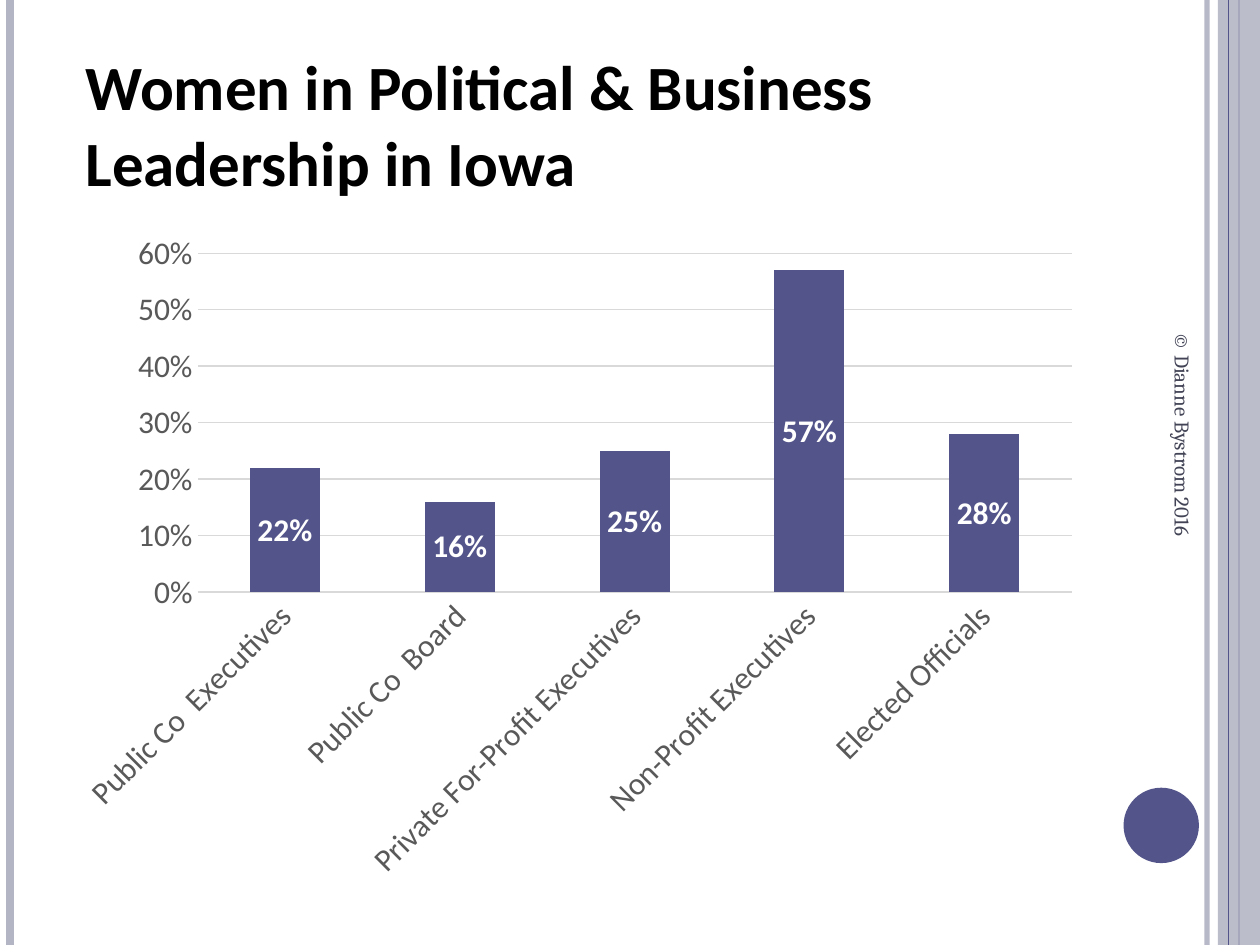
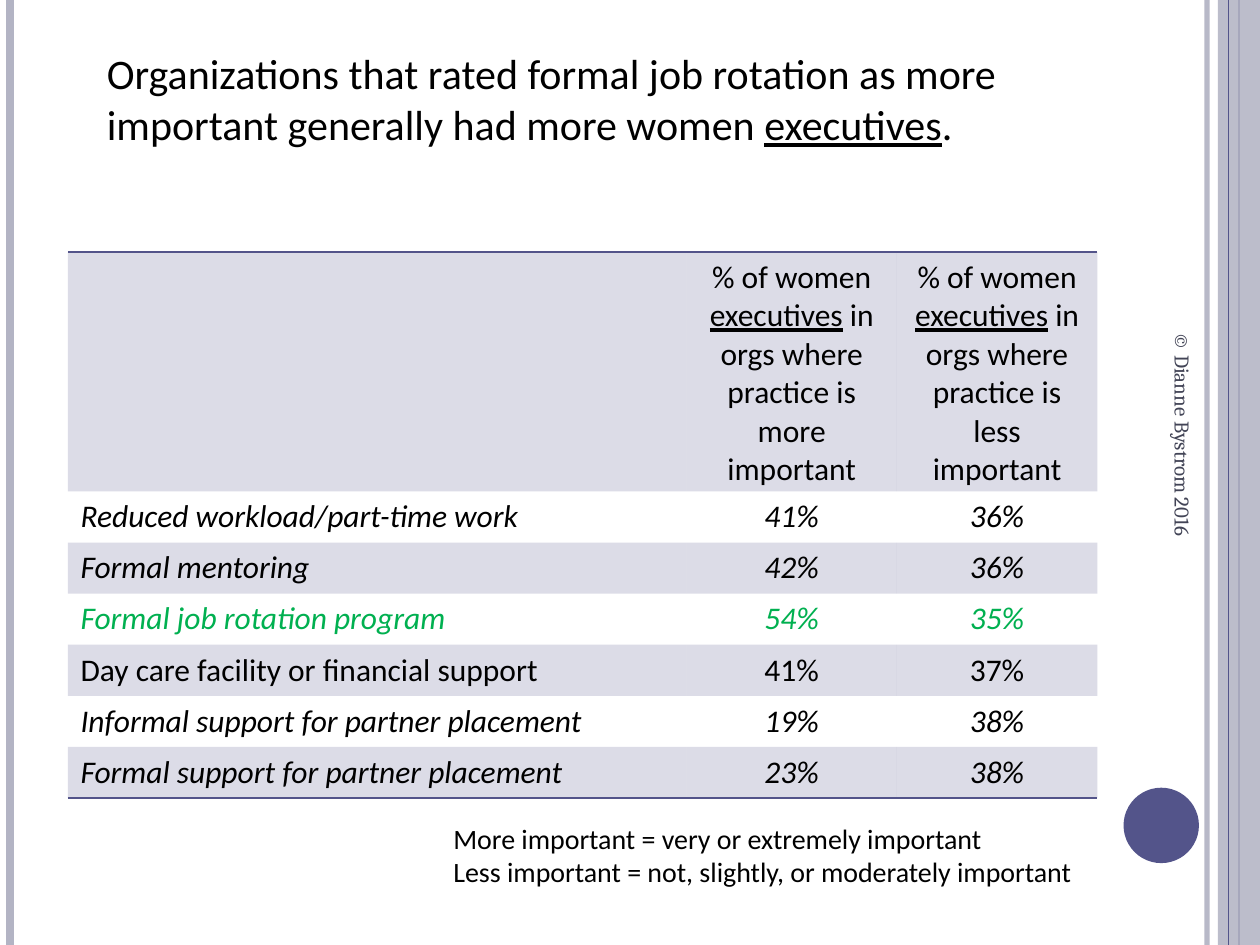
import dataclasses

import lxml.etree
import pptx
import pptx.chart.data
import pptx.dml.color
import pptx.enum.chart
import pptx.enum.shapes
import pptx.enum.text
import pptx.oxml.ns
import pptx.util

Cm = pptx.util.Cm
Pt = pptx.util.Pt
RGB = pptx.dml.color.RGBColor.from_string
qn = pptx.oxml.ns.qn


@dataclasses.dataclass(frozen=True)
class Theme:
    main: str = "53548A"
    pale: str = "B3B4C4"
    ink: str = "000000"
    soft: str = "595959"
    grid: str = "D9D9D9"
    white: str = "FFFFFF"
    green: str = "00B050"
    slate: str = "424456"
    sans: str = "Calibri"
    serif: str = "Cambria"
    head: int = 36
    claim: int = 24
    body: int = 18
    note: int = 16
    foot: int = 12


look = Theme()


def write(frame, *lines, size=look.body, hue=look.ink, face=look.sans,
          bold=False, slant=False, center=False):
    """Write one paragraph per line; words between underscores are underlined."""
    align = pptx.enum.text.PP_ALIGN
    for at, line in enumerate(lines):
        para = frame.paragraphs[0] if at == 0 else frame.add_paragraph()
        para.alignment = align.CENTER if center else align.LEFT
        for turn, words in enumerate(line.split("_")):
            run = para.add_run()
            run.text = words
            font = run.font
            font.name, font.size = face, Pt(size)
            font.bold, font.italic = bold, slant
            font.underline = turn % 2 == 1
            font.color.rgb = RGB(hue)


def fade(node, share):
    """Make the colours inside a node see-through; share is percent opaque."""
    for tint in node.iter(qn("a:srgbClr")):
        lxml.etree.SubElement(tint, qn("a:alpha")).set("val", str(share * 1000))


deck = pptx.Presentation()
deck.slide_width, deck.slide_height = Cm(25.4), Cm(19.05)

# Title texts with their places
heads = [
    ("Women in Political & Business Leadership in Iowa",
     (1.47, 0.84, 20.96, 3.33), look.head, True),
    ("Organizations that rated formal job rotation as more important "
     "generally had more women _executives_.",
     (1.9, 0.84, 20.14, 2.31), look.claim, False),
]

# Side rails (left, points, colour, percent opaque); zero points marks the band
rails = [
    (24.33, 3, look.pale, 93),
    (0.2, 4.5, look.pale, 100),
    (24.98, 1.5, look.main, 100),
    (24.55, 0, look.pale, 87),
    (24.77, 0.75, look.main, 100),
]

# Shared frame, title and footer
for words, place, size, bold in heads:
    slide = deck.slides.add_slide(deck.slide_layouts[5])
    shapes = slide.shapes
    for left, thick, hue, share in rails:
        if thick:
            part = shapes.add_connector(pptx.enum.shapes.MSO_CONNECTOR.STRAIGHT,
                                        Cm(left), 0, Cm(left), deck.slide_height)
            part.line.width = Pt(thick)
            part.line.color.rgb = RGB(hue)
            lxml.etree.SubElement(part.element.spPr, qn("a:effectLst"))
        else:
            part = shapes.add_shape(pptx.enum.shapes.MSO_SHAPE.RECTANGLE,
                                    Cm(left), 0, Cm(0.85), deck.slide_height)
            part.shadow.inherit = False
            part.fill.solid()
            part.fill.fore_color.rgb = RGB(hue)
            part.line.fill.background()
        if share < 100:
            fade(part.element.spPr, share)

    disc = shapes.add_shape(pptx.enum.shapes.MSO_SHAPE.OVAL,
                            Cm(22.65), Cm(15.88), Cm(1.52), Cm(1.52))
    disc.shadow.inherit = False
    disc.fill.solid()
    disc.fill.fore_color.rgb = RGB(look.main)
    disc.line.fill.background()

    title = shapes.title
    title.left, title.top, title.width, title.height = map(Cm, place)
    title.text_frame.vertical_anchor = pptx.enum.text.MSO_ANCHOR.TOP
    title.text_frame.auto_size = pptx.enum.text.MSO_AUTO_SIZE.NONE
    write(title.text_frame, words, size=size, bold=bold)

    foot = shapes.add_textbox(Cm(19.4), Cm(10.39), Cm(8.89), Cm(1.02))
    foot.rotation = 90
    foot.text_frame.word_wrap = True
    foot.text_frame.vertical_anchor = pptx.enum.text.MSO_ANCHOR.MIDDLE
    write(foot.text_frame, "© Dianne Bystrom 2016",
          size=look.foot, hue=look.slate, face=look.serif)

first, second = deck.slides

# Slide 1: column chart
data = pptx.chart.data.CategoryChartData(number_format="0%")
data.categories = ["Public Co  Executives", "Public Co  Board",
                   "Private For-Profit Executives",
                   "Non-Profit Executives", "Elected Officials"]
data.add_series("Series 1", [0.22, 0.16, 0.25, 0.57, 0.28])
chart = first.shapes.add_chart(
    pptx.enum.chart.XL_CHART_TYPE.COLUMN_STACKED,
    Cm(1.27), Cm(4.45), Cm(20.75), Cm(13.55), data).chart
chart.has_title = chart.has_legend = False
chart.font.name, chart.font.size = look.sans, Pt(look.body)
chart.font.color.rgb = RGB(look.soft)

plot = chart.plots[0]
plot.gap_width, plot.overlap = 150, 100
plot.vary_by_categories = False
bars = plot.series[0].format.fill
bars.solid()
bars.fore_color.rgb = RGB(look.main)

plot.has_data_labels = True
marks = plot.data_labels
marks.show_value = True
marks.position = pptx.enum.chart.XL_LABEL_POSITION.CENTER
marks.number_format, marks.number_format_is_linked = "0%", False
marks.font.name, marks.font.size = look.sans, Pt(look.body)
marks.font.bold = True
marks.font.color.rgb = RGB(look.white)

cats, vals = chart.category_axis, chart.value_axis
for axis in (cats, vals):
    axis.major_tick_mark = pptx.enum.chart.XL_TICK_MARK.NONE
    axis.minor_tick_mark = pptx.enum.chart.XL_TICK_MARK.NONE
    font = axis.tick_labels.font
    font.name, font.size = look.sans, Pt(look.body)
    font.color.rgb = RGB(look.soft)
vals.minimum_scale, vals.maximum_scale, vals.major_unit = 0, 0.6, 0.1
vals.tick_labels.number_format = "0%"
vals.tick_labels.number_format_is_linked = False
vals.format.line.fill.background()
for line in (cats.format.line, vals.major_gridlines.format.line):
    line.width = Pt(0.75)
    line.color.rgb = RGB(look.grid)
for body in chart.element.xpath(".//c:catAx/c:txPr/a:bodyPr"):
    body.set("rot", str(-45 * 60000))

# Slide 2: table of practices
ask = "% of women _executives_ in orgs where practice is {} important"
rows = [
    ("", ask.format("more"), ask.format("less")),
    ("Reduced workload/part-time work", "41%", "36%"),
    ("Formal mentoring", "42%", "36%"),
    ("Formal job rotation program", "54%", "35%"),
    ("Day care facility or financial support", "41%", "37%"),
    ("Informal support for partner placement", "19%", "38%"),
    ("Formal support for partner placement", "23%", "38%"),
]
plain, key = (0, 4), 3
last = len(rows) - 1
grid = second.shapes.add_table(len(rows), 3, Cm(1.37), Cm(5.08), Cm(20.75), Cm(11))
table = grid.table
table.first_row = table.horz_banding = False
bare = "{2D5ABB26-0587-4C30-8999-92F81FD0307C}"
grid.element.xpath(".//a:tableStyleId")[0].text = bare
for col, wide in zip(table.columns, (12.47, 4.24, 4.04)):
    col.width = Cm(wide)
for at, row in enumerate(rows):
    table.rows[at].height = Cm(1.03 if at else 4.8)
    for col, words in enumerate(row):
        cell = table.cell(at, col)
        if at % 2 == 0:
            cell.fill.solid()
            cell.fill.fore_color.rgb = RGB(look.main)
        else:
            cell.fill.background()
        if words:
            write(cell.text_frame, words, center=col > 0, slant=at not in plain,
                  hue=look.green if at == key else look.ink)

# Pale fills, then rules above the first row and below the last
for at, line in enumerate(grid.element.xpath(".//a:tr")):
    for props in line.xpath("./a:tc/a:tcPr"):
        fade(props, 20)
        if at in (0, last):
            edge = lxml.etree.Element(qn("a:lnB" if at else "a:lnT"), w=str(Pt(1)))
            fill = lxml.etree.SubElement(edge, qn("a:solidFill"))
            lxml.etree.SubElement(fill, qn("a:srgbClr"), val=look.main)
            props.insert(0, edge)

# Slide 2: key to the terms
note = second.shapes.add_textbox(Cm(8.89), Cm(16.43), Cm(13.13), Cm(1.63))
note.text_frame.word_wrap = False
note.text_frame.auto_size = pptx.enum.text.MSO_AUTO_SIZE.SHAPE_TO_FIT_TEXT
write(note.text_frame, "More important = very or extremely important",
      "Less important = not, slightly, or moderately important", size=look.note)

deck.save("out.pptx")
